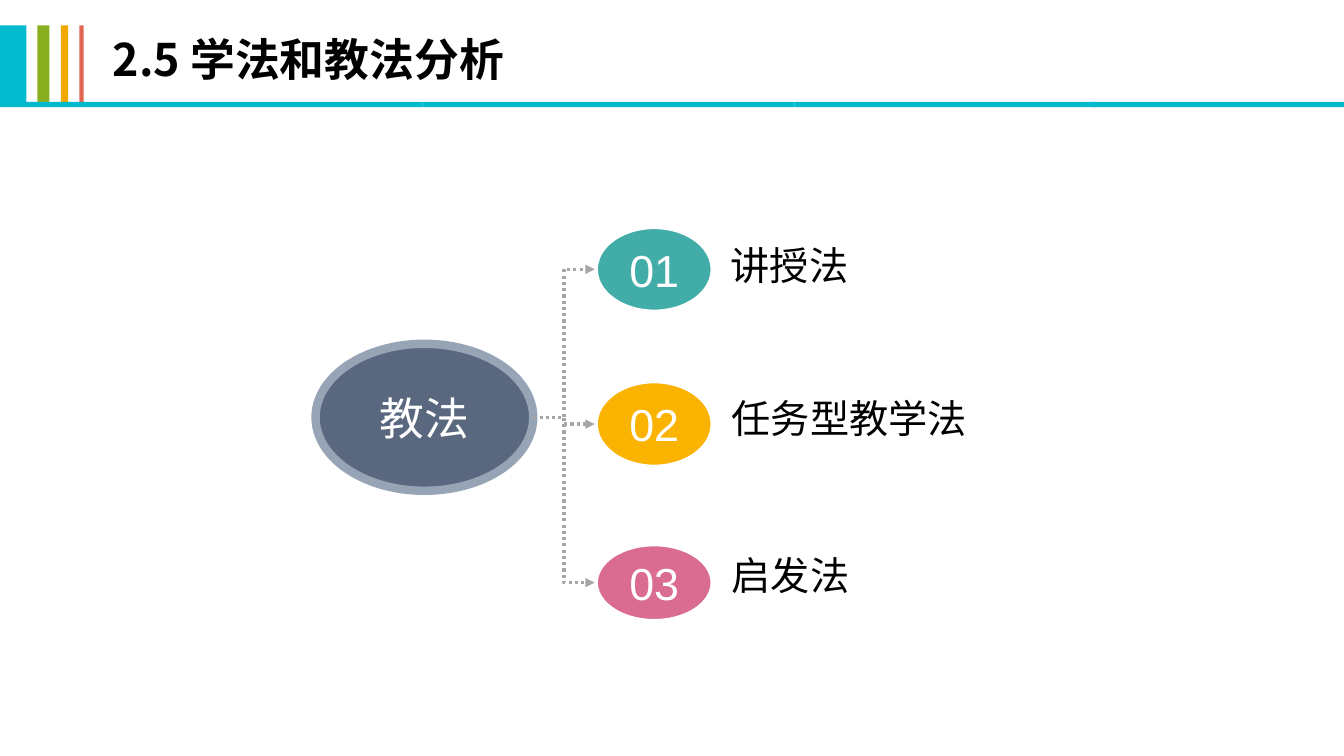
from lxml import etree
from pptx import Presentation
from pptx.dml.color import RGBColor
from pptx.enum.dml import MSO_LINE
from pptx.enum.shapes import MSO_CONNECTOR, MSO_SHAPE
from pptx.enum.text import MSO_ANCHOR, PP_ALIGN
from pptx.oxml.ns import qn
from pptx.util import Pt

RECTANGLE, OVAL = MSO_SHAPE.RECTANGLE, MSO_SHAPE.OVAL
ELBOW = MSO_CONNECTOR.ELBOW
DOTTED = MSO_LINE.ROUND_DOT
TOP, MIDDLE = MSO_ANCHOR.TOP, MSO_ANCHOR.MIDDLE
CENTER = PP_ALIGN.CENTER

CYAN = RGBColor(0x03, 0xB9, 0xCE)
GREEN = RGBColor(0x88, 0xAF, 0x20)
AMBER = RGBColor(0xF0, 0xA9, 0x01)
CORAL = RGBColor(0xE3, 0x66, 0x52)
TEAL = RGBColor(0x42, 0xAC, 0xA8)
YELLOW = RGBColor(0xFA, 0xB3, 0x01)
PINK = RGBColor(0xDA, 0x6C, 0x91)
SLATE = RGBColor(0x59, 0x68, 0x7F)
SLATE_RIM = RGBColor(0x97, 0xA4, 0xB6)
GRAY = RGBColor(0xA6, 0xA6, 0xA6)
WHITE = RGBColor(0xFF, 0xFF, 0xFF)
BLACK = RGBColor(0, 0, 0)

LATIN, CHINESE = "Arial", "Noto Sans CJK SC"

# Header: left and width of each piece
STRIPES = [(0, 18.8, CYAN), (26.8, 8.5, GREEN), (43.4, 5.3, AMBER), (56.8, 3, CORAL)]
RULE_PIECES = [(0, 301.7), (301.7, 265.7), (567.4, 215.3), (779.8, 180.2)]
STRIPE_TOP, RULE_TOP, RULE_HEIGHT = 18.2, 72.7, 3.8

# Diagram: number, name, colour, oval top and height, name left, top and width
METHODS = [
    ("01", "讲授法", TEAL, 161.4, 62, 522, 144.7, 128),
    ("02", "任务型教学法", YELLOW, 271.6, 62.6, 522.7, 253.4, 190),
    ("03", "启发法", PINK, 388, 56.4, 522.7, 365.8, 140),
]
HUB_LEFT, HUB_TOP, HUB_WIDTH, HUB_HEIGHT = 225.4, 245.6, 155.5, 105
OVAL_LEFT, OVAL_WIDTH = 424.8, 85
NAME_HEIGHT = 72.7


def add_run(paragraph, text, size, color, font=LATIN, bold=False):
    run = paragraph.add_run()
    run.text = text
    run.font.size = Pt(size)
    run.font.bold = bold
    run.font.color.rgb = color
    run.font.name = font
    east_asian = etree.SubElement(run.font._element, qn("a:ea"))
    east_asian.set("typeface", CHINESE)


def add_bar(slide, left, top, width, height, color):
    bar = slide.shapes.add_shape(RECTANGLE, Pt(left), Pt(top), Pt(width), Pt(height))
    bar.shadow.inherit = False
    bar.fill.solid()
    bar.fill.fore_color.rgb = color
    bar.line.fill.background()


def add_oval(slide, left, top, width, height, text, color, rim, rim_width):
    oval = slide.shapes.add_shape(OVAL, Pt(left), Pt(top), Pt(width), Pt(height))
    oval.shadow.inherit = False
    oval.fill.solid()
    oval.fill.fore_color.rgb = color
    oval.line.color.rgb = rim
    oval.line.width = Pt(rim_width)
    oval.text_frame.vertical_anchor = MIDDLE
    paragraph = oval.text_frame.paragraphs[0]
    paragraph.alignment = CENTER
    add_run(paragraph, text, 32, WHITE)


def add_text_frame(slide, left, top, width, height, anchor):
    box = slide.shapes.add_textbox(Pt(left), Pt(top), Pt(width), Pt(height))
    frame = box.text_frame
    frame.word_wrap = True
    frame.vertical_anchor = anchor
    return frame


def add_method_name(slide, left, top, width, text):
    frame = add_text_frame(slide, left, top, width, NAME_HEIGHT, MIDDLE)
    frame.margin_left = frame.margin_right = 0
    paragraph = frame.paragraphs[0]
    paragraph.line_spacing = 1.5
    add_run(paragraph, text, 28, BLACK)


def add_branch(slide, start_x, start_y, end_x, end_y):
    branch = slide.shapes.add_connector(ELBOW, Pt(start_x), Pt(start_y), Pt(end_x), Pt(end_y))
    branch.line.color.rgb = GRAY
    branch.line.width = Pt(2.25)
    branch.line.dash_style = DOTTED
    arrowhead = etree.SubElement(branch.line._get_or_add_ln(), qn("a:tailEnd"))
    arrowhead.set("type", "triangle")
    etree.SubElement(branch._element.spPr, qn("a:effectLst"))


def add_header(slide):
    for left, width, color in STRIPES:
        add_bar(slide, left, STRIPE_TOP, width, RULE_TOP - STRIPE_TOP, color)
    for left, width in RULE_PIECES:
        add_bar(slide, left, RULE_TOP, width, RULE_HEIGHT, CYAN)
    title = add_text_frame(slide, 73.4, 19.4, 443.5, 53.3, TOP)
    add_run(title.paragraphs[0], "2.5 学法和教法分析", 32, BLACK, CHINESE, True)


def add_diagram(slide):
    add_oval(slide, HUB_LEFT, HUB_TOP, HUB_WIDTH, HUB_HEIGHT, "教法", SLATE, SLATE_RIM, 6)
    for number, name, color, top, height, name_left, name_top, name_width in METHODS:
        add_oval(slide, OVAL_LEFT, top, OVAL_WIDTH, height, number, color, WHITE, 4.5)
        add_method_name(slide, name_left, name_top, name_width, name)
        add_branch(slide, HUB_LEFT + HUB_WIDTH, HUB_TOP + HUB_HEIGHT / 2,
                   OVAL_LEFT, top + height / 2)


def main():
    presentation = Presentation()
    presentation.slide_width, presentation.slide_height = Pt(960), Pt(540)
    slide = presentation.slides.add_slide(presentation.slide_layouts[6])
    add_header(slide)
    add_diagram(slide)
    presentation.save("out.pptx")


if __name__ == "__main__":
    main()
